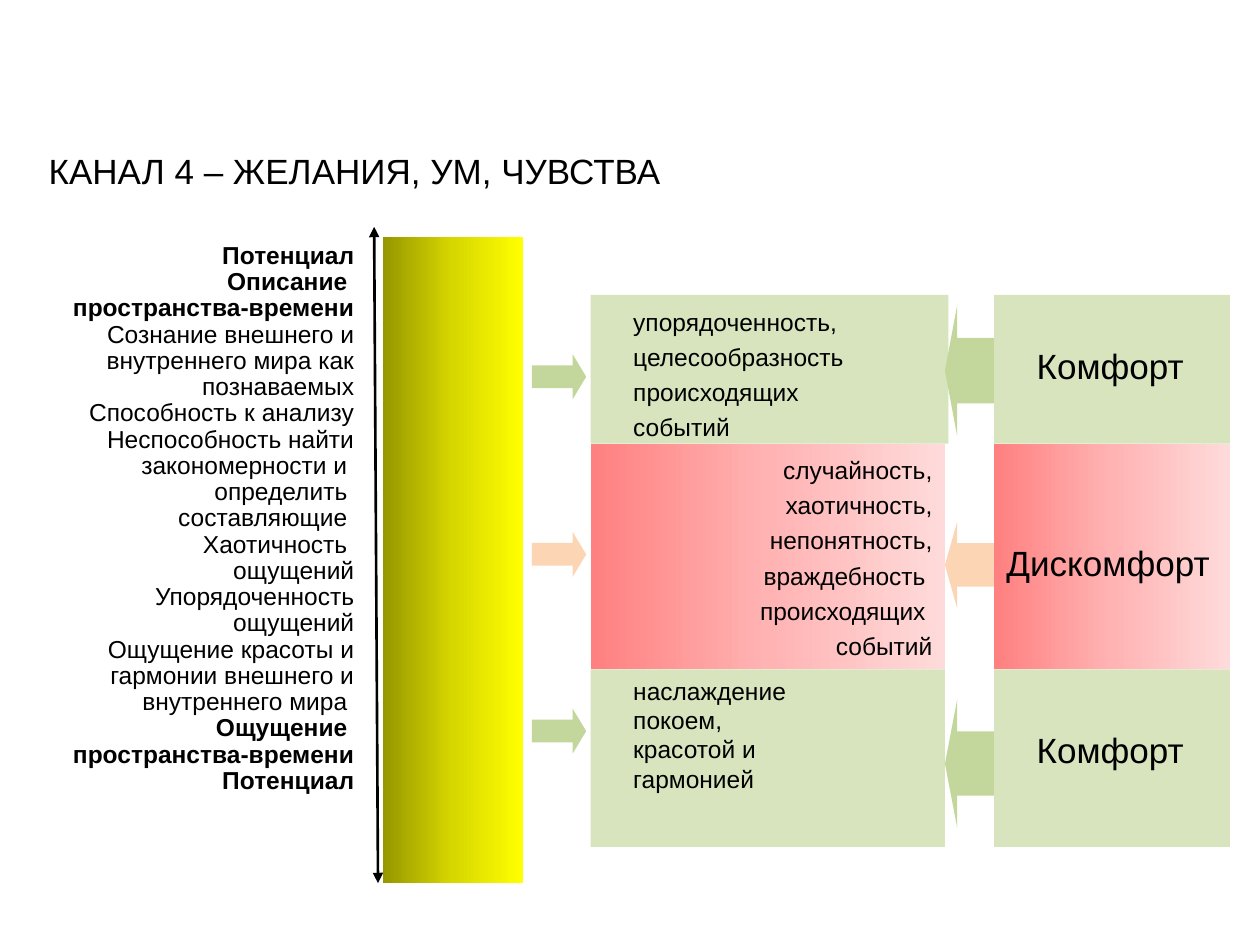
"""Build the slide on channel 4: desires, mind and feelings."""
from copy import deepcopy

from pptx import Presentation
from pptx.dml.color import RGBColor
from pptx.enum.shapes import MSO_CONNECTOR, MSO_SHAPE as SHAPE
from pptx.enum.text import MSO_ANCHOR, PP_ALIGN as ALIGN
from pptx.oxml.ns import qn
from pptx.util import Pt

BLACK = RGBColor(0, 0, 0)
PALE_GREEN = RGBColor(0xD7, 0xE4, 0xBD)
GREEN = RGBColor(0xC3, 0xD6, 0x9B)
PEACH = RGBColor(0xFC, 0xD5, 0xB5)
YELLOWS = [RGBColor(0x97, 0x97, 0), RGBColor(0xD7, 0xD7, 0), RGBColor(0xFF, 0xFF, 0)]
PINKS = [RGBColor(0xFF, 0x80, 0x80), RGBColor(0xFF, 0xB3, 0xB3), RGBColor(0xFF, 0xDA, 0xDA)]
FONT = "Arial"
INDENT = 17.3

TITLE = "КАНАЛ 4 – ЖЕЛАНИЯ, УМ, ЧУВСТВА"
SCALE = [
    ("Потенциал", True),
    ("Описание ", True),
    ("пространства-времени", True),
    ("Сознание внешнего и внутреннего мира как познаваемых", False),
    ("Способность к анализу", False),
    ("Неспособность найти закономерности и ", False),
    ("определить ", False),
    ("составляющие ", False),
    ("Хаотичность ", False),
    ("ощущений", False),
    ("Упорядоченность ощущений", False),
    ("Ощущение красоты и гармонии внешнего и внутреннего мира ", False),
    ("Ощущение ", True),
    ("пространства-времени", True),
    ("Потенциал", True),
]
ROWS = [
    dict(top=168.5, height=85, width=204.5, fill=PALE_GREEN, arrow=GREEN,
         feelings=["упорядоченность,", "целесообразность", "происходящих", "событий"],
         align=ALIGN.JUSTIFY, spacing=20, state="Комфорт", state_inset=28.5,
         state_indent=INDENT, right_top=202.3, left_top=174.3, left_height=75),
    dict(top=253.5, height=129, width=202.5, fill=PINKS, arrow=PEACH,
         feelings=["случайность,", "хаотичность,", "непонятность,",
                   "враждебность ", "происходящих ", "событий"],
         align=ALIGN.RIGHT, spacing=20, state="Дискомфорт", state_inset=56,
         state_indent=0, right_top=303.8, left_top=298, left_height=49.7),
    dict(top=382.5, height=101.5, width=202.5, fill=PALE_GREEN, arrow=GREEN,
         feelings=["наслаждение", "покоем,", "красотой и", "гармонией"],
         align=ALIGN.LEFT, spacing=None, state="Комфорт", state_inset=33.5,
         state_indent=INDENT, right_top=404.8, left_top=399.6, left_height=73.5),
]
FEELINGS_LEFT, STATE_LEFT, STATE_WIDTH = 337.5, 568, 134.8
RIGHT_LEFT, RIGHT_WIDTH, RIGHT_HEIGHT = 304, 31, 26
LEFT_LEFT = 540


def paint(shape, fill):
    if isinstance(fill, list):
        shape.fill.gradient()
        shape.fill.gradient_angle = 0
        stops = next(shape.element.iter(qn("a:gsLst")))
        stops.insert(1, deepcopy(stops[0]))
        for stop, color, position in zip(shape.fill.gradient_stops, fill, (0, 0.5, 1)):
            stop.color.rgb = color
            stop.position = position
    else:
        shape.fill.solid()
        shape.fill.fore_color.rgb = fill


def add_block(slide, kind, left, top, width, height, fill):
    block = slide.shapes.add_shape(kind, Pt(left), Pt(top), Pt(width), Pt(height))
    block.shadow.inherit = False
    block.line.fill.background()
    paint(block, fill)
    return block


def write(frame, lines, size, align, spacing=None, indent=0.0):
    frame.word_wrap = True
    frame.vertical_anchor = MSO_ANCHOR.TOP
    for number, (text, bold) in enumerate(lines):
        paragraph = frame.paragraphs[0] if number == 0 else frame.add_paragraph()
        paragraph.alignment = align
        if spacing:
            paragraph.line_spacing = Pt(spacing)
        if indent:
            properties = paragraph._p.get_or_add_pPr()
            properties.set("marL", "0")
            properties.set("indent", str(int(Pt(indent))))
        run = paragraph.add_run()
        run.text = text
        run.font.name = FONT
        run.font.size = Pt(size)
        run.font.bold = bold
        run.font.color.rgb = BLACK


def add_axis(slide):
    axis = slide.shapes.add_connector(
        MSO_CONNECTOR.STRAIGHT, Pt(213.8), Pt(129.6), Pt(216), Pt(504.7))
    axis.line.color.rgb = BLACK
    axis.line.width = Pt(1.5)
    line = axis.line._get_or_add_ln()
    for end in ("a:headEnd", "a:tailEnd"):
        line.append(line.makeelement(qn(end), {"type": "triangle"}))
    properties = axis.element.spPr
    properties.append(properties.makeelement(qn("a:effectLst"), {}))


def main():
    deck = Presentation()
    deck.slide_width, deck.slide_height = Pt(720), Pt(540)
    slide = deck.slides.add_slide(deck.slide_layouts[5])

    title = slide.shapes.title
    title.left, title.top, title.width, title.height = Pt(0), Pt(77), Pt(405.4), Pt(41)
    write(title.text_frame, [(TITLE, False)], 20, ALIGN.CENTER)
    title.text_frame.vertical_anchor = MSO_ANCHOR.MIDDLE

    add_block(slide, SHAPE.RECTANGLE, 219, 135.4, 80, 369.4, YELLOWS)
    scale = slide.shapes.add_textbox(Pt(16.5), Pt(135.4), Pt(193), Pt(375))
    write(scale.text_frame, SCALE, 14, ALIGN.RIGHT, 15, INDENT)

    for row in ROWS:
        feelings = add_block(slide, SHAPE.RECTANGLE, FEELINGS_LEFT, row["top"],
                             row["width"], row["height"], row["fill"])
        write(feelings.text_frame, [(line, False) for line in row["feelings"]],
              14, row["align"], row["spacing"], INDENT)

        state = add_block(slide, SHAPE.RECTANGLE, STATE_LEFT, row["top"],
                          STATE_WIDTH, row["height"], row["fill"])
        write(state.text_frame, [(row["state"], False)], 20, ALIGN.JUSTIFY,
              indent=row["state_indent"])
        state.text_frame.margin_top = Pt(row["state_inset"])

        to_feelings = add_block(slide, SHAPE.RIGHT_ARROW, RIGHT_LEFT, row["right_top"],
                                RIGHT_WIDTH, RIGHT_HEIGHT, row["arrow"])
        to_feelings.adjustments[1] = 0.3
        from_state = add_block(slide, SHAPE.LEFT_ARROW, LEFT_LEFT, row["left_top"],
                               STATE_LEFT - LEFT_LEFT, row["left_height"], row["arrow"])
        from_state.adjustments[1] = 0.25

    add_axis(slide)
    deck.save("out.pptx")


if __name__ == "__main__":
    main()
